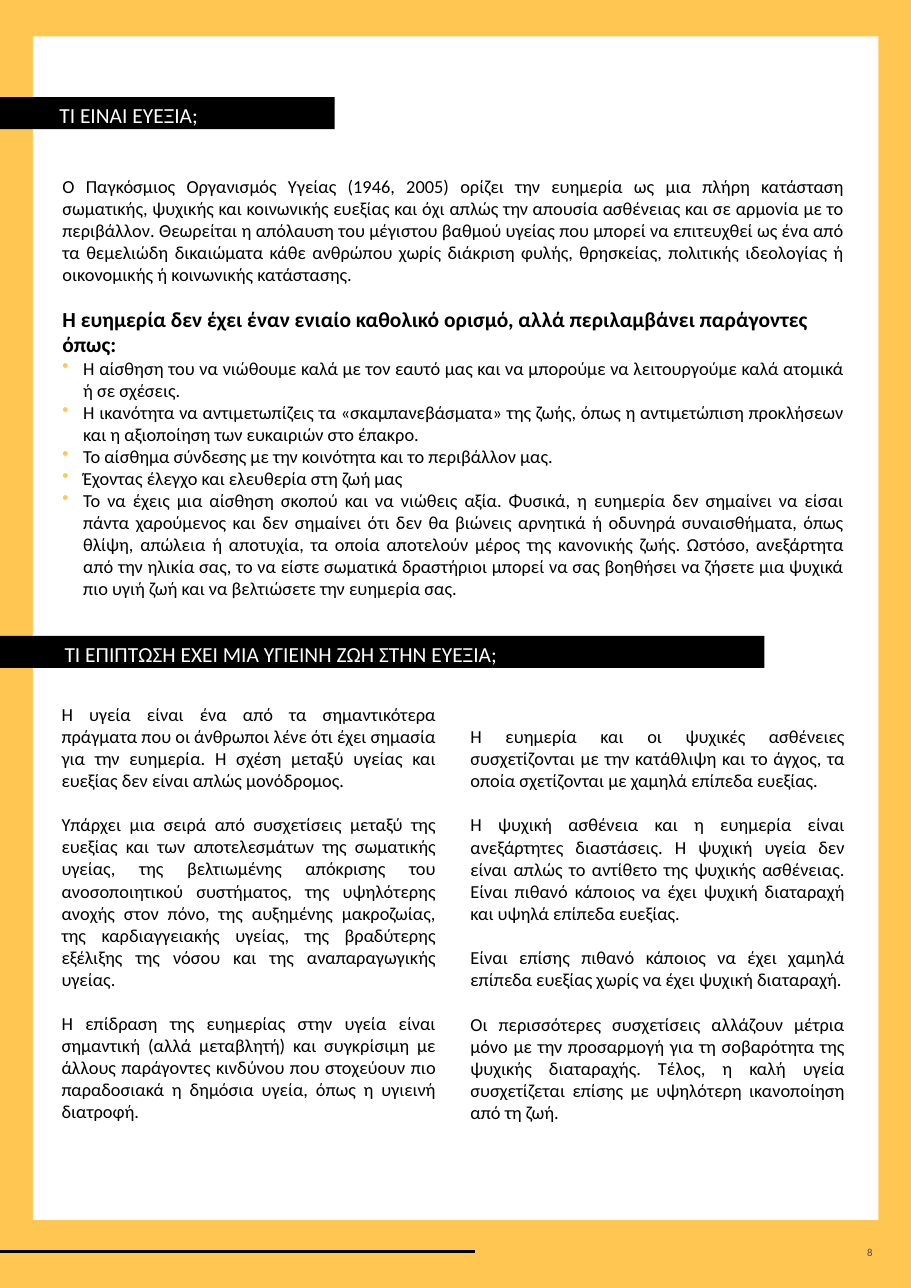
from lxml import etree
from pptx import Presentation
from pptx.dml.color import RGBColor
from pptx.enum.shapes import MSO_CONNECTOR, MSO_SHAPE
from pptx.enum.text import MSO_ANCHOR, PP_ALIGN
from pptx.oxml.ns import qn
from pptx.util import Cm, Pt

RECTANGLE = MSO_SHAPE.RECTANGLE
STRAIGHT = MSO_CONNECTOR.STRAIGHT
TOP, MIDDLE = MSO_ANCHOR.TOP, MSO_ANCHOR.MIDDLE
LEFT, RIGHT, JUSTIFY = PP_ALIGN.LEFT, PP_ALIGN.RIGHT, PP_ALIGN.JUSTIFY

PAGE_WIDTH, PAGE_HEIGHT = 21.01, 29.69
YELLOW, WHITE, BLACK, GREY = "FFC652", "FFFFFF", "000000", "4B4B4B"

DEFINITION = "Ο Παγκόσμιος Οργανισμός Υγείας (1946, 2005) ορίζει την ευημερία ως μια πλήρη κατάσταση σωματικής, ψυχικής και κοινωνικής ευεξίας και όχι απλώς την απουσία ασθένειας και σε αρμονία με το περιβάλλον. Θεωρείται η απόλαυση του μέγιστου βαθμού υγείας που μπορεί να επιτευχθεί ως ένα από τα θεμελιώδη δικαιώματα κάθε ανθρώπου χωρίς διάκριση φυλής, θρησκείας, πολιτικής ιδεολογίας ή οικονομικής ή κοινωνικής κατάστασης."
FACTORS_HEADING = "Η ευημερία δεν έχει έναν ενιαίο καθολικό ορισμό, αλλά περιλαμβάνει παράγοντες όπως:"
FACTORS = [
    "Η αίσθηση του να νιώθουμε καλά με τον εαυτό μας και να μπορούμε να λειτουργούμε καλά ατομικά ή σε σχέσεις.",
    "Η ικανότητα να αντιμετωπίζεις τα «σκαμπανεβάσματα» της ζωής, όπως η αντιμετώπιση προκλήσεων και η αξιοποίηση των ευκαιριών στο έπακρο.",
    "Το αίσθημα σύνδεσης με την κοινότητα και το περιβάλλον μας.",
    "Έχοντας έλεγχο και ελευθερία στη ζωή μας",
    "Το να έχεις μια αίσθηση σκοπού και να νιώθεις αξία. Φυσικά, η ευημερία δεν σημαίνει να είσαι πάντα χαρούμενος και δεν σημαίνει ότι δεν θα βιώνεις αρνητικά ή οδυνηρά συναισθήματα, όπως θλίψη, απώλεια ή αποτυχία, τα οποία αποτελούν μέρος της κανονικής ζωής. Ωστόσο, ανεξάρτητα από την ηλικία σας, το να είστε σωματικά δραστήριοι μπορεί να σας βοηθήσει να ζήσετε μια ψυχικά πιο υγιή ζωή και να βελτιώσετε την ευημερία σας.",
]
HEALTH_COLUMN = [
    "Η υγεία είναι ένα από τα σημαντικότερα πράγματα που οι άνθρωποι λένε ότι έχει σημασία για την ευημερία. Η σχέση μεταξύ υγείας και ευεξίας δεν είναι απλώς μονόδρομος.",
    "Υπάρχει μια σειρά από συσχετίσεις μεταξύ της ευεξίας και των αποτελεσμάτων της σωματικής υγείας, της βελτιωμένης απόκρισης του ανοσοποιητικού συστήματος, της υψηλότερης ανοχής στον πόνο, της αυξημένης μακροζωίας, της καρδιαγγειακής υγείας, της βραδύτερης εξέλιξης της νόσου και της αναπαραγωγικής υγείας.",
    "Η επίδραση της ευημερίας στην υγεία είναι σημαντική (αλλά μεταβλητή) και συγκρίσιμη με άλλους παράγοντες κινδύνου που στοχεύουν πιο παραδοσιακά η δημόσια υγεία, όπως η υγιεινή διατροφή.",
]
MIND_COLUMN = [
    "Η ευημερία και οι ψυχικές ασθένειες συσχετίζονται με την κατάθλιψη και το άγχος, τα οποία σχετίζονται με χαμηλά επίπεδα ευεξίας.",
    "Η ψυχική ασθένεια και η ευημερία είναι ανεξάρτητες διαστάσεις. Η ψυχική υγεία δεν είναι απλώς το αντίθετο της ψυχικής ασθένειας. Είναι πιθανό κάποιος να έχει ψυχική διαταραχή και υψηλά επίπεδα ευεξίας.",
    "Είναι επίσης πιθανό κάποιος να έχει χαμηλά επίπεδα ευεξίας χωρίς να έχει ψυχική διαταραχή.",
    "Οι περισσότερες συσχετίσεις αλλάζουν μέτρια μόνο με την προσαρμογή για τη σοβαρότητα της ψυχικής διαταραχής. Τέλος, η καλή υγεία συσχετίζεται επίσης με υψηλότερη ικανοποίηση από τη ζωή.",
]


def color(value):
    return RGBColor.from_string(value)


class Page:
    font_name = "Calibri"
    body_size = 12
    heading_size = 14
    paragraph_gap = 14.65
    bullet_indent = 0.48

    def __init__(self, slide):
        self.slide = slide

    def rectangle(self, left, top, width, height, fill):
        shape = self.slide.shapes.add_shape(
            RECTANGLE, Cm(left), Cm(top), Cm(width), Cm(height))
        shape.shadow.inherit = False
        shape.fill.solid()
        shape.fill.fore_color.rgb = color(fill)
        shape.line.fill.background()
        return shape

    def rule(self, left, right, top):
        line = self.slide.shapes.add_connector(
            STRAIGHT, Cm(left), Cm(top), Cm(right), Cm(top))
        line.line.color.rgb = color(BLACK)
        line.line.width = Pt(1.5)
        etree.SubElement(line._element.spPr, qn("a:effectLst"))

    def text_frame(self, left, top, width, height, anchor=TOP):
        box = self.slide.shapes.add_textbox(
            Cm(left), Cm(top), Cm(width), Cm(height))
        box.text_frame.word_wrap = True
        box.text_frame.vertical_anchor = anchor
        return box.text_frame

    def paragraph(self, frame, text, size=body_size, fill=BLACK, bold=False,
                  align=JUSTIFY, before=0, indent=0, bullet=False):
        first = frame.paragraphs[0]
        paragraph = frame.add_paragraph() if first.runs else first
        paragraph.add_run().text = text
        paragraph.alignment = align
        if before:
            paragraph.space_before = Pt(before)
        properties = paragraph._p.get_or_add_pPr()
        if indent:
            properties.set("marL", str(Cm(indent)))
            properties.set("indent", str(-Cm(indent) if bullet else 0))
        if bullet:
            bullet_color = etree.SubElement(properties, qn("a:buClr"))
            etree.SubElement(bullet_color, qn("a:srgbClr"), val=YELLOW)
            etree.SubElement(properties, qn("a:buChar"), char="•")
        font = paragraph.font
        font.name = self.font_name
        font.size = Pt(size)
        font.bold = bold
        font.color.rgb = color(fill)

    def title_bar(self, top, width, text, indent):
        frame = self.rectangle(0, top, width, 0.74, BLACK).text_frame
        frame.word_wrap = True
        frame.vertical_anchor = TOP
        self.paragraph(frame, text, self.heading_size, WHITE,
                       align=LEFT, indent=indent)

    def column(self, left, top, texts):
        frame = self.text_frame(left, top, 9.14, 10)
        for index, text in enumerate(texts):
            self.paragraph(frame, text,
                           before=self.paragraph_gap if index else 0)

    def factors(self):
        frame = self.text_frame(1.19, 3.91, 18.54, 10)
        self.paragraph(frame, DEFINITION)
        self.paragraph(frame, FACTORS_HEADING, self.heading_size, bold=True,
                       align=LEFT, before=13.4)
        for text in FACTORS:
            self.paragraph(frame, text, indent=self.bullet_indent, bullet=True)


def main():
    presentation = Presentation()
    presentation.slide_width = Cm(PAGE_WIDTH)
    presentation.slide_height = Cm(PAGE_HEIGHT)
    page = Page(presentation.slides.add_slide(presentation.slide_layouts[6]))

    page.rectangle(0, 0, PAGE_WIDTH, PAGE_HEIGHT, YELLOW)
    page.rectangle(0.76, 0.84, 19.5, 27.28, WHITE)
    page.rule(0, 10.95, 28.85)

    page.title_bar(2.24, 7.72, "ΤΙ ΕΙΝΑΙ ΕΥΕΞΙΑ;", 1.12)
    page.factors()

    page.title_bar(14.66, 17.63,
                   "ΤΙ ΕΠΙΠΤΩΣΗ ΕΧΕΙ ΜΙΑ ΥΓΙΕΙΝΗ ΖΩΗ ΣΤΗΝ ΕΥΕΞΙΑ;", 1.24)
    page.column(1.17, 16.08, HEALTH_COLUMN)
    page.column(10.6, 16.59, MIND_COLUMN)

    number = page.text_frame(17.63, 28.65, 2.74, 0.41, MIDDLE)
    page.paragraph(number, "8", 7, GREY, align=RIGHT)

    presentation.save("out.pptx")


if __name__ == "__main__":
    main()
